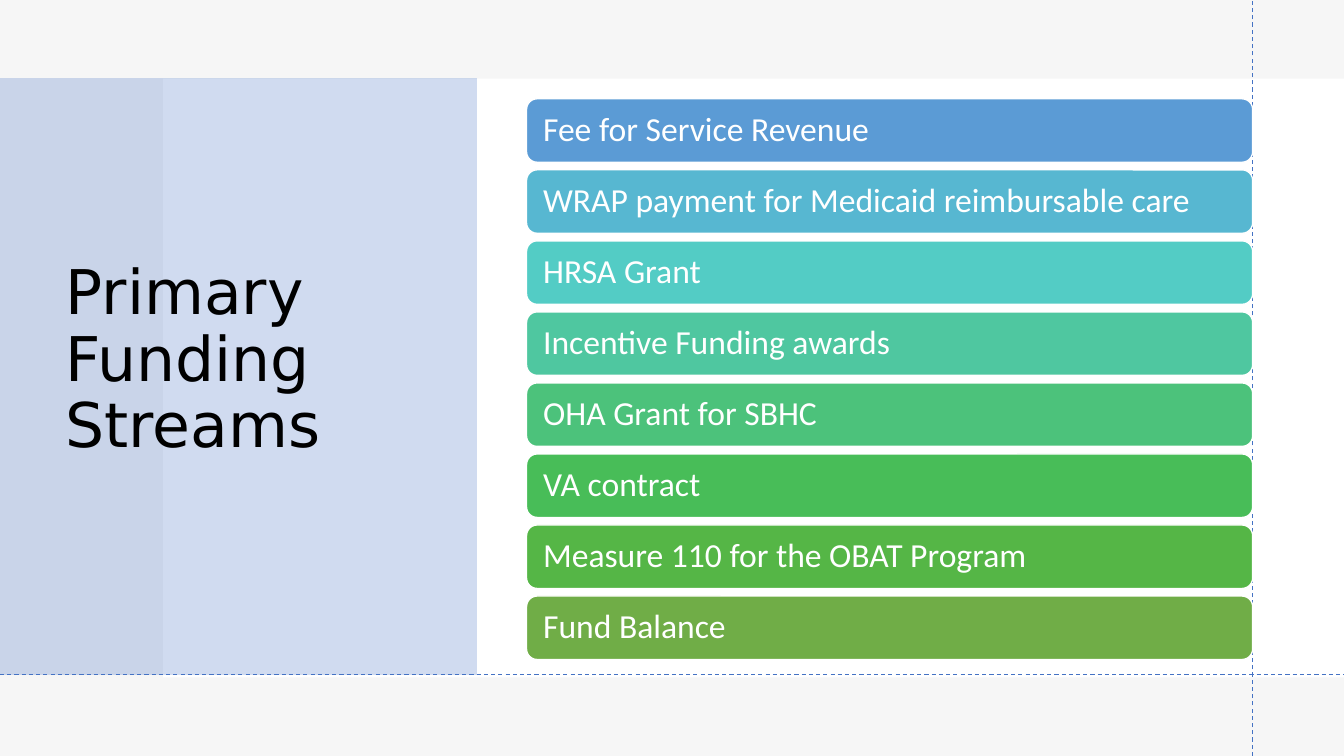
from pptx import Presentation
from pptx import util as u
from pptx.dml.color import RGBColor
from pptx.enum import dml, shapes, text
from pptx.oxml.ns import qn
from lxml import etree

# Content
TITLE = "Primary Funding Streams"
STREAMS = [
    ("Fee for Service Revenue", "5B9BD5"),
    ("WRAP payment for Medicaid reimbursable care", "57B7D1"),
    ("HRSA Grant", "53CCC5"),
    ("Incentive Funding awards", "4FC7A0"),
    ("OHA Grant for SBHC", "4CC27B"),
    ("VA contract", "48BD58"),
    ("Measure 110 for the OBAT Program", "55B646"),
    ("Fund Balance", "70AD47"),
]
COLOR = {"back": "F6F6F6", "white": "FFFFFF", "blue": "4472C4", "black": "000000"}

# Measures in centimetres
WIDE, HIGH = 33.87, 19.05
SHEET = (4.11, 1.98, WIDE - 4.11, 15.09)
PANEL = (0, 1.97, 12.02, 15.04)
HEAD = (1.4, 1.88, 10.03, 14.45)
GUIDES = [(31.56, HIGH, 31.56, 0), (0, 17, WIDE, 17)]
LEFT, TOP, WIDTH, HEIGHT, PITCH = 13.27, 2.49, 18.3, 1.6, 1.79
FRAME = {
    "word_wrap": True,
    "auto_size": text.MSO_AUTO_SIZE.NONE,
    "vertical_anchor": text.MSO_ANCHOR.MIDDLE,
}
INSET = {"margin_left": u.Cm(0.34), "margin_right": u.Cm(0.34),
         "margin_top": u.Cm(0.25), "margin_bottom": u.Cm(0.25)}
PARA = {"alignment": text.PP_ALIGN.LEFT, "line_spacing": 0.9}


def rgb(value):
    return RGBColor.from_string(value)


def cm(box):
    return [u.Cm(n) for n in box]


def apply(item, values):
    for key, value in values.items():
        setattr(item, key, value)


def block(slide, kind, box, fill):
    shape = slide.shapes.add_shape(kind, *cm(box))
    shape.shadow.inherit = False
    shape.fill.solid()
    shape.fill.fore_color.rgb = rgb(fill)
    shape.line.fill.background()
    return shape


def write(shape, words, font, size, color, frame):
    apply(shape.text_frame, frame)
    shape.text_frame.text = words
    para = shape.text_frame.paragraphs[0]
    apply(para, PARA)
    apply(para.runs[0].font, {"name": font, "size": u.Pt(size)})
    para.runs[0].font.color.rgb = rgb(color)


def main():
    deck = Presentation()
    deck.slide_width, deck.slide_height = u.Cm(WIDE), u.Cm(HIGH)
    slide = deck.slides.add_slide(deck.slide_layouts[5])
    slide.background.fill.solid()
    slide.background.fill.fore_color.rgb = rgb(COLOR["back"])

    # White sheet and tinted side panel
    rect = shapes.MSO_SHAPE.RECTANGLE
    block(slide, rect, SHEET, COLOR["white"])
    panel = block(slide, rect, PANEL, COLOR["blue"])
    tint = panel.fill._xPr.find(qn("a:solidFill"))[0]
    etree.SubElement(tint, qn("a:alpha"), val="25000")

    # Title, raised above the panel
    title = slide.shapes.title
    apply(title, dict(zip(("left", "top", "width", "height"), cm(HEAD))))
    write(title, TITLE, "DejaVu Sans", 44, COLOR["black"], FRAME)
    slide.shapes._spTree.append(title._element)

    # Dashed guide lines
    for ends in GUIDES:
        guide = slide.shapes.add_connector(shapes.MSO_CONNECTOR.STRAIGHT, *cm(ends))
        guide.line.color.rgb = rgb(COLOR["blue"])
        apply(guide.line, {"width": u.Pt(0.75), "dash_style": dml.MSO_LINE.DASH})
        etree.SubElement(guide._element.spPr, qn("a:effectLst"))

    # Funding bars
    for i, (name, fill) in enumerate(STREAMS):
        box = (LEFT, TOP + i * PITCH, WIDTH, HEIGHT)
        bar = block(slide, shapes.MSO_SHAPE.ROUNDED_RECTANGLE, box, fill)
        bar.line.color.rgb = rgb(COLOR["white"])
        bar.line.width = u.Pt(1)
        write(bar, name, "Calibri", 24, COLOR["white"], {**FRAME, **INSET})

    deck.save("out.pptx")


if __name__ == "__main__":
    main()
